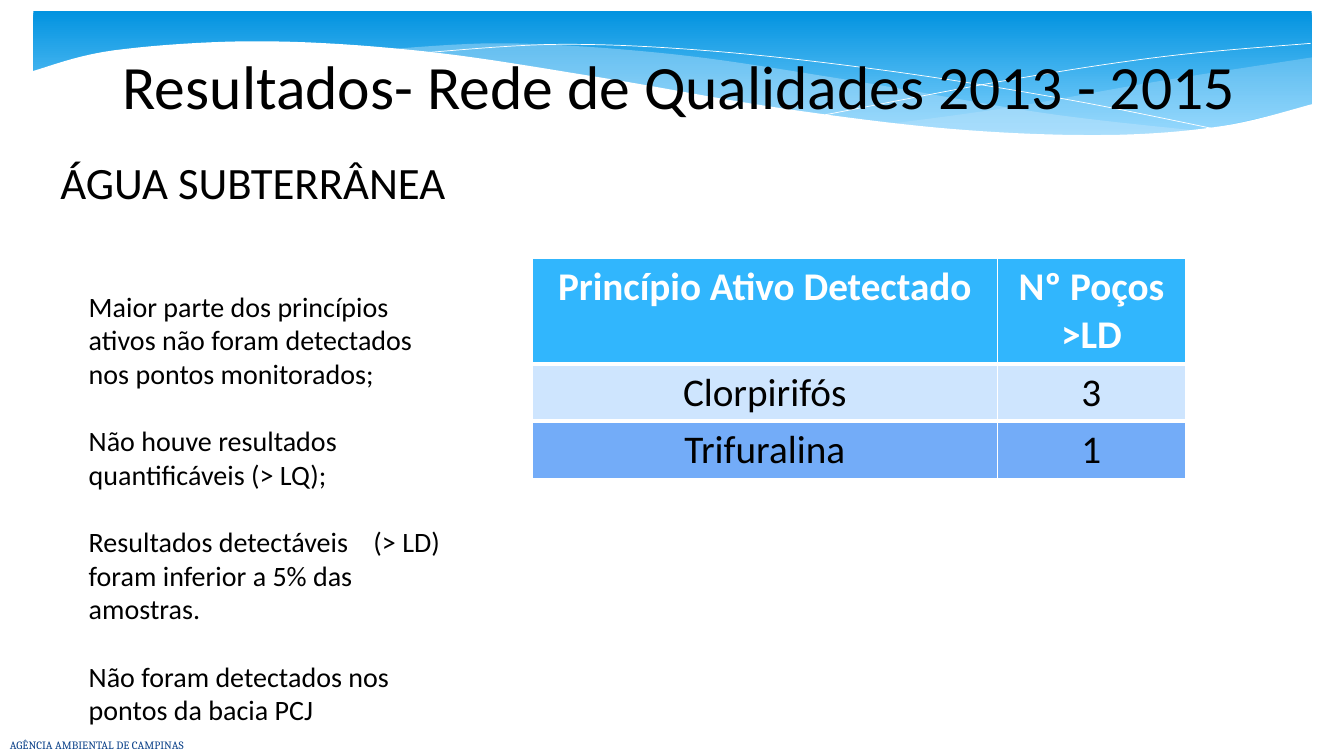
"""Build the groundwater results slide with its wave banner, findings and table."""
from lxml.etree import SubElement
from pptx import Presentation
from pptx.dml.color import RGBColor
from pptx.enum.shapes import MSO_SHAPE
from pptx.enum.text import MSO_ANCHOR, MSO_AUTO_SIZE, PP_ALIGN
from pptx.oxml.ns import qn
from pptx.util import Inches, Pt

THEME = {
    "font": "Calibri", "footer_font": "Cambria",
    "title": 44, "heading": 32, "table": 28, "body": 20, "footer": 8,
    "ink": RGBColor.from_string("000000"),
    "white": RGBColor.from_string("FFFFFF"),
    "footer_ink": RGBColor.from_string("073E87"),
    "banner_top": RGBColor.from_string("0293E0"),
    "banner_bottom": RGBColor.from_string("83D3FE"),
    "wave": RGBColor.from_string("C6E7FC"),
    "rows": [RGBColor.from_string(c) for c in ("31B6FD", "CEE5FE", "73ACF8")],
}
CURVE_STEPS = 10


def style(paragraph, size, color=THEME["ink"], align=PP_ALIGN.LEFT, font=THEME["font"], bold=False):
    paragraph.alignment = align
    paragraph.font.name = font
    paragraph.font.size = Pt(size)
    paragraph.font.bold = bold
    paragraph.font.color.rgb = color


def smooth(knots):
    """Return points, in EMU, along the Catmull-Rom curve through the knots."""
    padded = [knots[0], *knots, knots[-1]]
    curve = []
    for before, start, end, after in zip(padded, padded[1:], padded[2:], padded[3:]):
        for step in range(CURVE_STEPS):
            t = step / CURVE_STEPS
            curve.append([
                Inches(b + (c - a) * t / 2 + (2 * a - 5 * b + 4 * c - d) * t**2 / 2
                       + (3 * b - a - 3 * c + d) * t**3 / 2 - b + b)
                for a, b, c, d in zip(before, start, end, after)])
    return curve + [[Inches(value) for value in knots[-1]]]


prs = Presentation()
prs.slide_width, prs.slide_height = Inches(13.33), Inches(7.5)
slide = prs.slides.add_slide(prs.slide_layouts[1])
shapes = slide.shapes

banner = shapes.add_shape(MSO_SHAPE.RECTANGLE, Inches(0.33), Inches(0.11), Inches(12.68), Inches(1.36))
banner.shadow.inherit = False
banner.line.fill.background()
banner.fill.gradient()
banner.fill.gradient_angle = 270
top_stop, bottom_stop = banner.fill.gradient_stops
top_stop.color.rgb, top_stop.position = THEME["banner_top"], 0
bottom_stop.color.rgb, bottom_stop.position = THEME["banner_bottom"], 0.9

right_crest = [(13.01, 0.57), (11.47, 0.81), (10.05, 1.06), (8.82, 1.23)]
right_trough = [(8.82, 1.23), (10.41, 1.35), (11.74, 1.31), (13.01, 1.05)]
middle_crest = [(3.82, 0.49), (5.06, 0.43), (6.69, 0.54), (8.39, 0.79), (10.34, 1.12), (11.9, 1.3)]
middle_trough = [(11.9, 1.3), (10.61, 1.36), (9.07, 1.26), (7.55, 1.06), (5.99, 0.79), (3.82, 0.49)]
falling_line = [(4.12, 0.53), (5.55, 0.44), (7.1, 0.51), (8.86, 0.71), (10.6, 0.99), (12.1, 1.29)]
rising_line = [(8.18, 1.14), (9.97, 0.8), (11.55, 0.56), (13, 0.43)]
page_edge = [(0.31, 0.71), (1.13, 0.5), (2.58, 0.41), (4.21, 0.51), (5.96, 0.77), (7.72, 1.07),
             (9.44, 1.28), (10.97, 1.34), (12.13, 1.25), (13.03, 1.03)]
page_bottom = [(13.03, 1.87), (0.31, 1.87)]

for edges, fill_color, opacity in (
        ((right_crest, right_trough), THEME["wave"], 29),
        ((middle_crest, middle_trough), THEME["wave"], 40),
        ((falling_line,), None, 100),
        ((rising_line,), None, 100),
        ((page_edge, page_bottom), THEME["white"], 100)):
    outline = [point for edge in edges for point in smooth(edge)]
    builder = shapes.build_freeform(*outline[0])
    builder.add_line_segments(outline[1:], close=fill_color is not None)
    wave = builder.convert_to_shape()
    wave.shadow.inherit = False
    if fill_color is None:
        wave.fill.background()
        wave.line.color.rgb = THEME["white"]
        wave.line.width = Pt(0.5)
        continue
    wave.line.fill.background()
    wave.fill.solid()
    wave.fill.fore_color.rgb = fill_color
    if opacity < 100:
        color_element = wave.element.spPr.find(qn("a:solidFill"))[0]
        SubElement(color_element, qn("a:alpha"), val=str(opacity * 1000))

footer = shapes.add_textbox(Inches(0), Inches(7.19), Inches(5.52), Inches(0.4)).text_frame
footer.word_wrap = True
footer.vertical_anchor = MSO_ANCHOR.MIDDLE
footer.text = "AGÊNCIA AMBIENTAL DE CAMPINAS"
style(footer.paragraphs[0], THEME["footer"], THEME["footer_ink"], font=THEME["footer_font"])

title, findings = shapes.title, slide.placeholders[1]
for placeholder, bounds in ((title, (0.26, 0.12, 12.96, 1.45)), (findings, (0.78, 2.82, 3.82, 4.48))):
    shapes.element.append(placeholder.element)
    placeholder.left, placeholder.top, placeholder.width, placeholder.height = map(Inches, bounds)
    placeholder.text_frame.auto_size = MSO_AUTO_SIZE.NONE

title.text_frame.text = "Resultados- Rede de Qualidades 2013 - 2015"
title.text_frame.vertical_anchor = MSO_ANCHOR.MIDDLE
style(title.text_frame.paragraphs[0], THEME["title"], align=PP_ALIGN.CENTER)

heading = shapes.add_textbox(Inches(0.49), Inches(1.49), Inches(4.04), Inches(1.18)).text_frame
heading.word_wrap = True
heading.text = "ÁGUA SUBTERRÂNEA"
style(heading.paragraphs[0], THEME["heading"], align=PP_ALIGN.CENTER)

detections = [("Princípio Ativo Detectado", "Nº Poços >LD"), ("Clorpirifós", "3"), ("Trifuralina", "1")]
wells = shapes.add_table(3, 2, Inches(5.28), Inches(2.56), Inches(6.48), Inches(2.19)).table
for column, width in zip(wells.columns, (4.61, 1.87)):
    column.width = Inches(width)
for row, height in zip(wells.rows, (1.05, 0.57, 0.57)):
    row.height = Inches(height)
header_rule = {0: "a:lnB", 1: "a:lnT"}
for row_index, texts in enumerate(detections):
    header = row_index == 0
    for column_index, text in enumerate(texts):
        cell = wells.cell(row_index, column_index)
        cell.text = text
        style(cell.text_frame.paragraphs[0], THEME["table"],
              THEME["white"] if header else THEME["ink"], PP_ALIGN.CENTER, bold=header)
        if row_index in header_rule:
            border = SubElement(cell._tc.get_or_add_tcPr(), qn(header_rule[row_index]), w=str(Pt(3)))
            SubElement(SubElement(border, qn("a:solidFill")), qn("a:srgbClr"), val=str(THEME["white"]))
        cell.fill.solid()
        cell.fill.fore_color.rgb = THEME["rows"][row_index]

findings_text = [
    ["Maior parte dos princípios ativos não foram detectados nos pontos monitorados;"],
    ["Não houve resultados quantificáveis (> LQ);"],
    ["Resultados detectáveis", "(> LD) foram inferior a 5% das amostras."],
    ["Não foram detectados nos pontos da bacia PCJ"]]
for index, (opening, *continuation) in enumerate(findings_text):
    finding = findings.text_frame.add_paragraph() if index else findings.text_frame.paragraphs[0]
    finding.space_before = Pt(24 if index else 0)
    properties = finding._p.get_or_add_pPr()
    properties.set("marL", "0")
    properties.set("indent", "0")
    SubElement(properties, qn("a:buNone"))
    style(finding, THEME["body"])
    finding.add_run().text = opening
    for remainder in continuation:
        wide_space = finding.add_run()
        wide_space.text = " "
        wide_space._r.get_or_add_rPr().set("spc", "1350")
        finding.add_run().text = remainder

prs.save("out.pptx")
